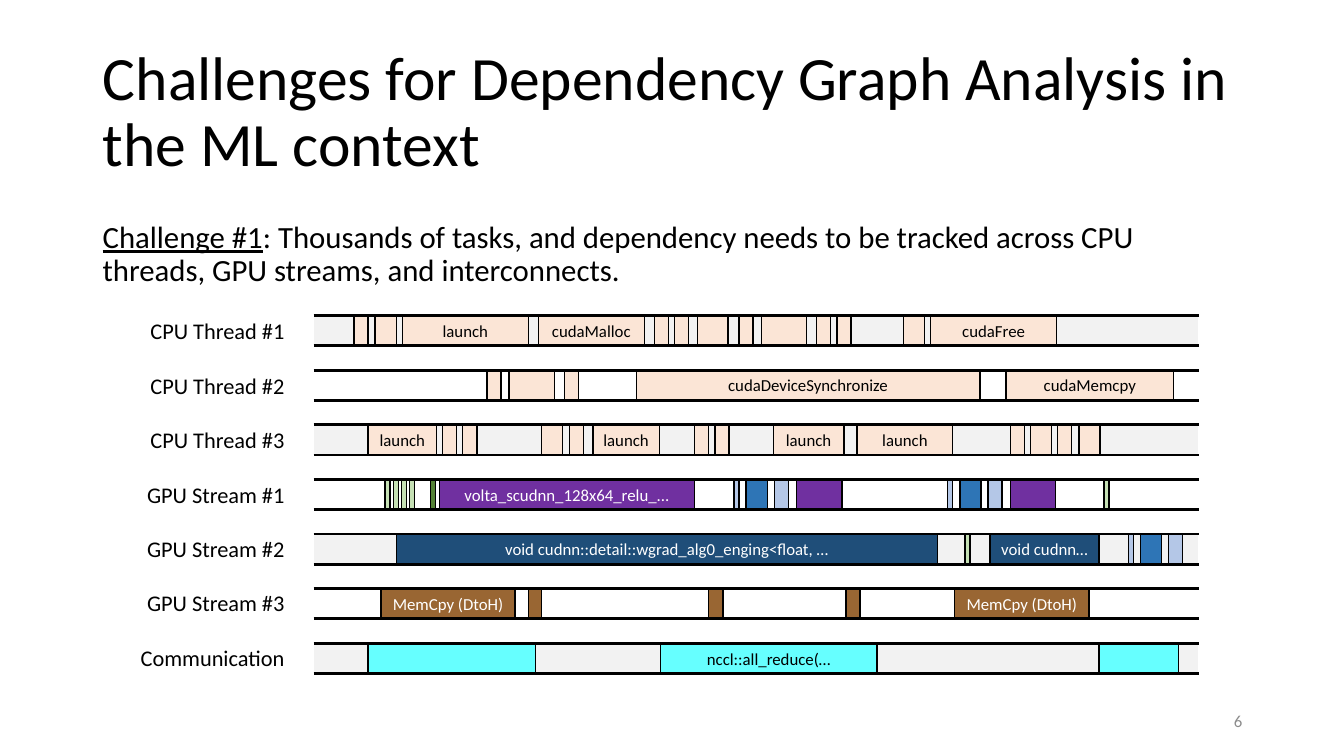
from dataclasses import dataclass
from lxml import etree
from pptx import Presentation
from pptx import util as u
from pptx.dml.color import RGBColor
from pptx.enum import shapes, text
from pptx.oxml.ns import qn


@dataclass(frozen=True)
class Theme:
    """Colours, font and type sizes of the slide."""
    font: str = "Calibri"
    ink: str = "000000"
    paper: str = "FFFFFF"
    grey: str = "8C8C8C"
    band: str = "F2F2F2"
    call: str = "FBE5D6"
    mint: str = "C5E0B4"
    moss: str = "548235"
    plum: str = "7030A0"
    sky: str = "B4C7E7"
    blue: str = "2E75B6"
    navy: str = "1F4E79"
    brown: str = "996633"
    cyan: str = "66FFFF"
    title: int = 44
    lead: int = 22
    label: int = 16
    small: int = 12


THEME = Theme()
UNIT = u.Inches(0.01)
WIDE, HIGH = 1333, 750
LEFT, RIGHT = 311, 1189
TOP, PITCH, DEPTH = 313, 54.2, 30
DARK = {THEME.plum, THEME.navy, THEME.brown}


def grid(*cells):
    """Turn grid columns and rows into lengths."""
    return [round(cell * UNIT) for cell in cells]


def style(item, **form):
    """Set each format value on an item."""
    for name, value in form.items():
        setattr(item, name, value)


def write(frame, runs, size, color=THEME.ink, para=None, **form):
    """Fill a text frame with one paragraph of (words, underline) runs."""
    style(frame, **form)
    line = frame.paragraphs[0]
    style(line, **(para or {}))
    for words, under in runs:
        run = line.add_run()
        run.text = words
        style(run.font, name=THEME.font, size=u.Pt(size), underline=under)
        run.font.color.rgb = RGBColor.from_string(color)


def head(slide, words):
    """Place and format the title placeholder."""
    title = slide.shapes.title
    style(title, **dict(zip(("left", "top", "width", "height"),
                            grid(92, 40, 1150, 145))))
    write(title.text_frame, [(words, False)], THEME.title,
          para={"alignment": text.PP_ALIGN.LEFT, "line_spacing": 0.9},
          vertical_anchor=text.MSO_ANCHOR.MIDDLE, word_wrap=True,
          auto_size=text.MSO_AUTO_SIZE.NONE)


def note(slide, cells, runs, size, color=THEME.ink, para=None, **form):
    """Add a wrapped text box."""
    box = slide.shapes.add_textbox(*grid(*cells))
    write(box.text_frame, runs, size, color, para, word_wrap=True, **form)


def block(slide, cells, fill, edge, words=""):
    """Add a filled rectangle with an optional centred caption."""
    box = slide.shapes.add_shape(shapes.MSO_SHAPE.RECTANGLE, *grid(*cells))
    box.shadow.inherit = False
    box.fill.solid()
    box.fill.fore_color.rgb = RGBColor.from_string(fill)
    box.line.color.rgb = RGBColor.from_string(edge)
    box.line.width = u.Pt(1)
    if words:
        write(box.text_frame, [(words, False)], THEME.small,
              THEME.paper if fill in DARK else THEME.ink,
              {"alignment": text.PP_ALIGN.CENTER}, word_wrap=False,
              vertical_anchor=text.MSO_ANCHOR.MIDDLE)


def rail(slide, row):
    """Draw one horizontal border of a lane."""
    line = slide.shapes.add_connector(shapes.MSO_CONNECTOR.STRAIGHT,
                                      *grid(LEFT, row, RIGHT, row))
    line.line.color.rgb = RGBColor.from_string(THEME.ink)
    line.line.width = u.Pt(2)
    etree.SubElement(line._element.spPr, qn("a:effectLst"))


def lane(slide, index, name, tasks):
    """Draw a named lane, its tasks and its borders."""
    row = TOP + PITCH * index
    if index % 2 == 0:
        block(slide, (LEFT, row, RIGHT - LEFT, DEPTH), THEME.band, THEME.paper)
    note(slide, (112, 310 + 54 * index, 180, 37), [(name, False)],
         THEME.label, para={"alignment": text.PP_ALIGN.RIGHT})
    for fill, col, span, *words in tasks:
        block(slide, (col, row, span, DEPTH), fill, THEME.ink, *words)
    for edge in (row, row + DEPTH):
        rail(slide, edge)


def tint(fill, *tasks):
    """Give several tasks the same fill."""
    return [(fill, *task) for task in tasks]


def step(col, count=4):
    """List the first tasks of the recurring kernel sequence."""
    parts = [(THEME.sky, 0, 5), (THEME.blue, 12, 21),
             (THEME.sky, 40, 14), (THEME.plum, 62, 45)]
    return [(fill, col + gap, span) for fill, gap, span in parts[:count]]


LANES = {
    "CPU Thread #1": tint(
        THEME.call, (351, 14), (372, 21), (399, 125, "launch"),
        (534, 105, "cudaMalloc"), (649, 14), (669, 14), (692, 30), (733, 14),
        (755, 45), (810, 14), (830, 14), (896, 21), (923, 125, "cudaFree")),
    "CPU Thread #2": tint(
        THEME.call, (483, 14), (505, 45), (560, 14),
        (631, 341, "cudaDeviceSynchronize"), (998, 166, "cudaMemcpy")),
    "CPU Thread #3": tint(
        THEME.call, (365, 68, "launch"), (439, 14), (459, 14), (537, 21),
        (565, 14), (588, 66, "launch"), (689, 14), (709, 14),
        (767, 70, "launch"), (850, 95, "launch"), (1002, 14), (1022, 21),
        (1049, 14), (1070, 21)),
    "GPU Stream #1": [
        *tint(THEME.mint, *((382 + 8 * i, 5) for i in range(4)), (1095, 5)),
        (THEME.moss, 427, 5),
        (THEME.plum, 436, 253, "volta_scudnn_128x64_relu_..."),
        *step(728), *step(940)],
    "GPU Stream #2": [
        *tint(THEME.navy,
              (393, 537, "void cudnn::detail::wgrad_alg0_enging<float, …"),
              (982, 108, "void cudnn…")),
        (THEME.mint, 957, 5), *step(1119, 3)],
    "GPU Stream #3": tint(
        THEME.brown, (378, 133, "MemCpy (DtoH)"), (524, 13), (703, 14),
        (839, 14), (947, 133, "MemCpy (DtoH)")),
    "Communication": tint(
        THEME.cyan, (365, 166), (655, 215, "nccl::all_reduce(…"), (1090, 79)),
}


def main():
    """Build the slide and save it."""
    deck = Presentation()
    deck.slide_width, deck.slide_height = grid(WIDE, HIGH)
    slide = deck.slides.add_slide(deck.slide_layouts[5])
    head(slide, "Challenges for Dependency Graph Analysis in the ML context")
    note(slide, (92, 215, 1127, 82),
         [("Challenge #1", True),
          (": Thousands of tasks, and dependency needs to be tracked across "
           "CPU threads, GPU streams, and interconnects.", False)],
         THEME.lead, para={"line_spacing": 0.9, "space_before": u.Pt(10)})
    for index, (name, tasks) in enumerate(LANES.items()):
        lane(slide, index, name, tasks)
    note(slide, (942, 695, 300, 40), [("6", False)], THEME.small, THEME.grey,
         {"alignment": text.PP_ALIGN.RIGHT},
         vertical_anchor=text.MSO_ANCHOR.MIDDLE)
    deck.save("out.pptx")


if __name__ == "__main__":
    main()
